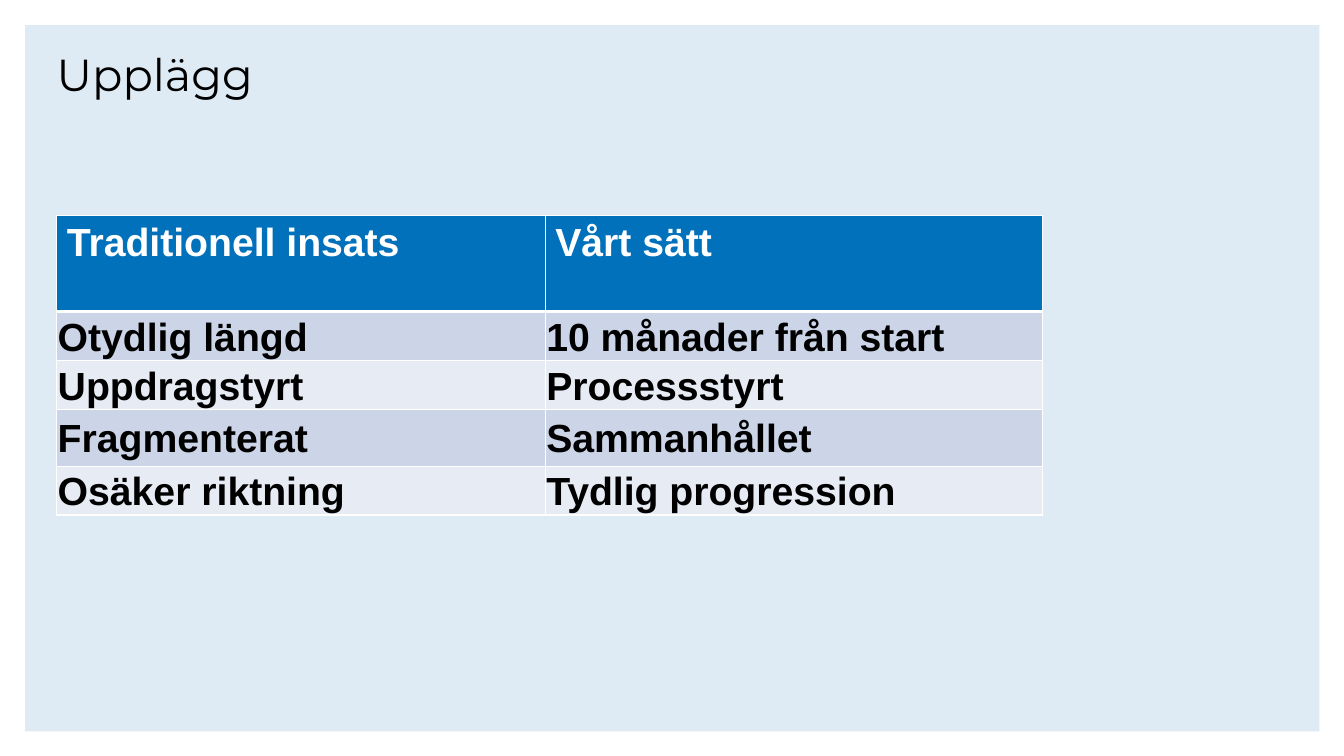
import pptx
import pptx.dml.color
import pptx.enum.text
import pptx.oxml
import pptx.oxml.ns
import pptx.util
from pptx.util import Pt

WHITE, BLACK = "FFFFFF", "000000"
PANEL, HEADER = "DFEBF4", "0071BA"
BANDS = ("CCD5E7", "E7EBF3")

COMPARISON = [
    ("Traditionell insats", "Vårt sätt"),
    ("Otydlig längd", "10 månader från start"),
    ("Uppdragstyrt", "Processstyrt"),
    ("Fragmenterat", "Sammanhållet"),
    ("Osäker riktning", "Tydlig progression"),
]
COLUMN_WIDTHS = (349, 355)
ROW_HEIGHTS = (68.5, 35, 35, 40.5, 35)


def rgb(color):
    return pptx.dml.color.RGBColor.from_string(color)


class SlideBuilder:
    title_font = "Montserrat"
    table_font = "Arial"

    def __init__(self, slide):
        self.slide = slide

    def style_runs(self, paragraph, font, size, color, bold=False):
        for run in paragraph.runs:
            run.font.name = font
            run.font.size = Pt(size)
            run.font.bold = bold
            run.font.color.rgb = rgb(color)

    def panel(self, left, top, width, height):
        """Draw the tinted rectangle behind everything else."""
        panel = self.slide.shapes.add_shape(
            pptx.enum.shapes.MSO_SHAPE.RECTANGLE,
            Pt(left), Pt(top), Pt(width), Pt(height))
        panel.shadow.inherit = False
        panel.fill.solid()
        panel.fill.fore_color.rgb = rgb(PANEL)
        panel.line.fill.background()
        self.slide.shapes._spTree.insert(2, panel._element)

    def title(self, wording, left, top, width, height):
        title = self.slide.shapes.title
        title.left, title.top = Pt(left), Pt(top)
        title.width, title.height = Pt(width), Pt(height)
        frame = title.text_frame
        frame.text = wording
        frame.word_wrap = True
        frame.auto_size = pptx.enum.text.MSO_AUTO_SIZE.NONE
        frame.vertical_anchor = pptx.enum.text.MSO_ANCHOR.TOP
        frame.margin_left = frame.margin_right = 0
        frame.margin_top = frame.margin_bottom = 0
        heading = frame.paragraphs[0]
        heading.alignment = pptx.enum.text.PP_ALIGN.LEFT
        heading.line_spacing = 0.9
        self.style_runs(heading, self.title_font, 32, BLACK)

    def borders(self, cell, **widths):
        """Give a cell white borders, with widths keyed by side: L, R, T, B."""
        properties = cell._tc.get_or_add_tcPr()
        for side, width in widths.items():
            properties.append(pptx.oxml.parse_xml(
                f'<a:ln{side} {pptx.oxml.ns.nsdecls("a")} w="{Pt(width)}">'
                f'<a:solidFill><a:srgbClr val="{WHITE}"/></a:solidFill>'
                f'</a:ln{side}>'))

    def cell(self, cell, wording, row):
        is_header = row == 0
        self.borders(cell, L=1, R=1, T=3 if row == 1 else 1, B=3 if is_header else 1)
        cell.fill.solid()
        cell.fill.fore_color.rgb = rgb(HEADER if is_header else BANDS[(row - 1) % 2])
        cell.text = wording
        paragraph = cell.text_frame.paragraphs[0]
        if not is_header:
            cell.vertical_anchor = pptx.enum.text.MSO_ANCHOR.MIDDLE
            cell.margin_left = cell.margin_right = Pt(0.75)
            cell.margin_top = cell.margin_bottom = Pt(0.75)
            paragraph.line_spacing = 1.07
            paragraph.space_after = Pt(8)
        self.style_runs(paragraph, self.table_font, 28,
                        WHITE if is_header else BLACK, bold=True)

    def table(self, rows, left, top, widths, heights):
        table = self.slide.shapes.add_table(
            len(rows), len(widths), Pt(left), Pt(top),
            Pt(sum(widths)), Pt(sum(heights))).table
        for column, width in zip(table.columns, widths):
            column.width = Pt(width)
        for row, height in zip(table.rows, heights):
            row.height = Pt(height)
        for r, wordings in enumerate(rows):
            for c, wording in enumerate(wordings):
                self.cell(table.cell(r, c), wording, r)


def main():
    presentation = pptx.Presentation()
    presentation.slide_width, presentation.slide_height = Pt(960), Pt(540)
    title_only = presentation.slide_layouts[5]
    builder = SlideBuilder(presentation.slides.add_slide(title_only))
    builder.panel(18, 18, 924.5, 504.5)
    builder.title("Upplägg", 40.5, 37.5, 866, 104.5)
    builder.table(COMPARISON, 40.5, 154, COLUMN_WIDTHS, ROW_HEIGHTS)
    presentation.save("out.pptx")


if __name__ == "__main__":
    main()
